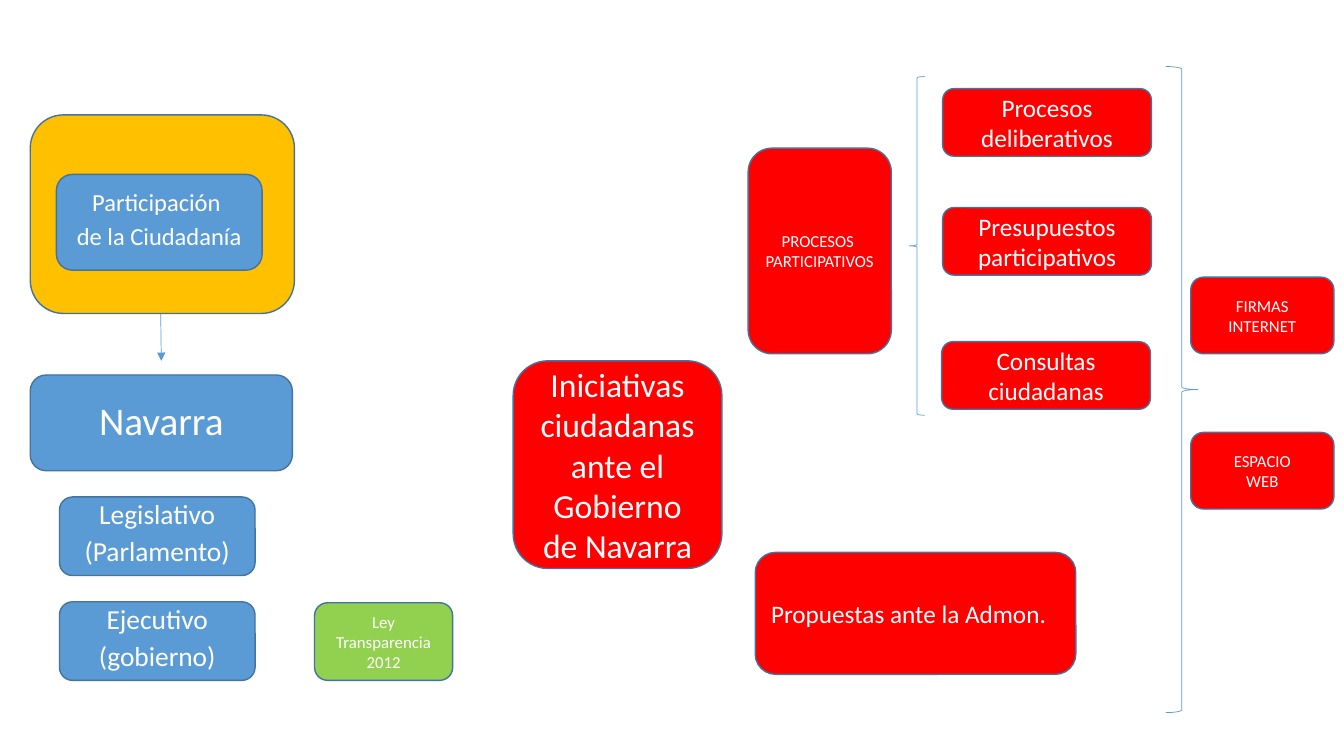
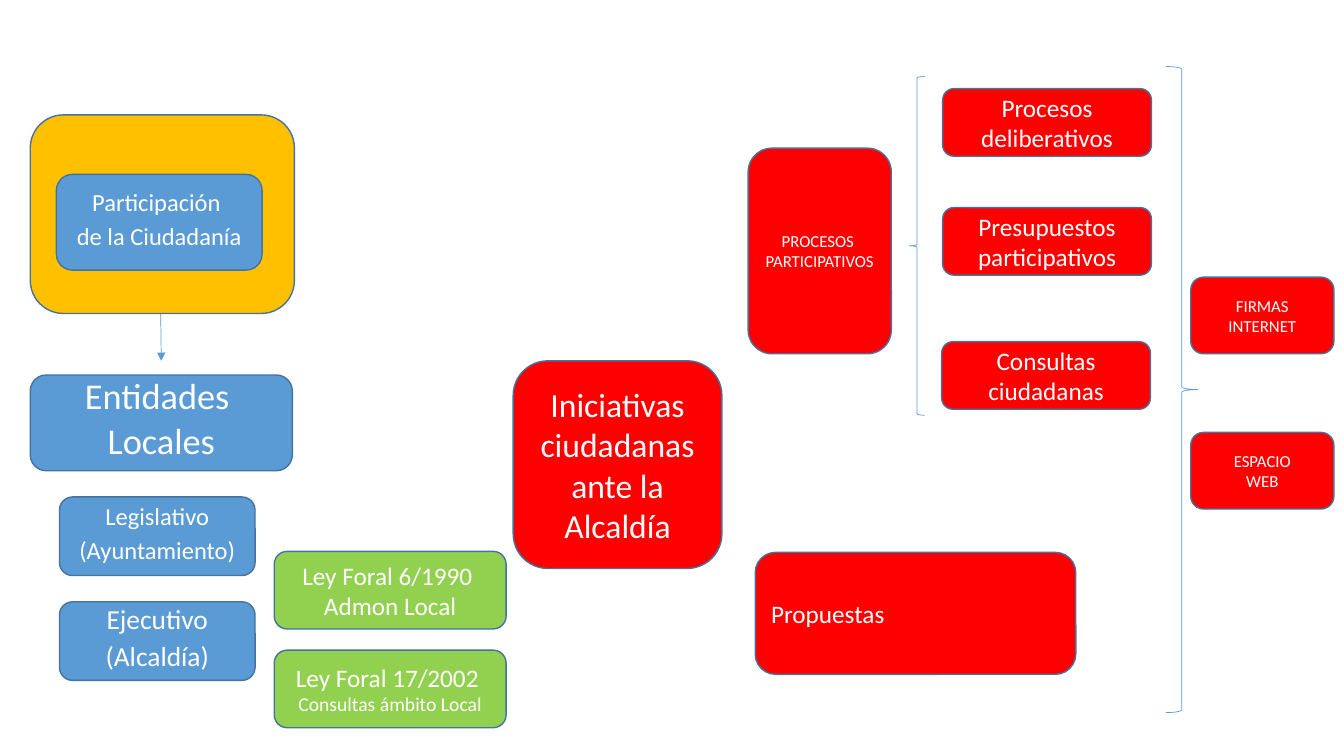
"""Build two slides on citizen participation: regional and local government."""
from pptx import Presentation, util as u
from pptx.dml.color import RGBColor
from pptx.enum import shapes, text
from pptx.oxml import parse_xml
from pptx.oxml.ns import nsdecls

HUES = {"blue": "5B9BD5", "edge": "43739E", "gold": "FFC000",
        "red": "FF0000", "green": "92D050", "white": "FFFFFF"}
KINDS = shapes.MSO_SHAPE
MID = text.PP_ALIGN.CENTER
LEFT = text.PP_ALIGN.LEFT

FRAME = {"word_wrap": True, "vertical_anchor": text.MSO_ANCHOR.MIDDLE}
PLAIN = {"alignment": MID}
START = {"alignment": LEFT}
TIGHT = {"alignment": MID, "line_spacing": 0.7, "space_before": u.Pt(10)}
LOOSE = {**TIGHT, "line_spacing": 0.9}

ARROW = (1.59, 2.8, 1.6, 3.58)
BRACES = [(KINDS.LEFT_BRACE, (9.02, 0.76, 0.15, 3.36)),
          (KINDS.RIGHT_BRACE, (11.56, 0.66, 0.32, 6.41))]

PLACES = {
    "group": (0.3, 1.14, 2.62, 1.97), "theme": (0.56, 1.73, 2.04, 0.95),
    "scope": (0.3, 3.72, 2.6, 0.95),
    "law": (0.59, 4.93, 1.94, 0.78), "rule": (0.59, 5.97, 1.94, 0.78),
    "starts": (5.09, 3.58, 2.07, 2.06), "open": (7.42, 1.47, 1.42, 2.04),
    "talks": (9.35, 0.88, 2.07, 0.67), "funds": (9.35, 2.06, 2.07, 0.67),
    "polls": (9.34, 3.39, 2.07, 0.67), "ideas": (7.49, 5.48, 3.18, 1.21),
    "signs": (11.81, 2.75, 1.42, 0.76), "web": (11.81, 4.29, 1.42, 0.76),
    "act": (3.12, 5.98, 1.37, 0.77),
    "act 1990": (2.72, 5.47, 2.3, 0.77), "act 2002": (2.72, 6.45, 2.3, 0.77),
}

SHARED = [
    ("group", "gold", 18, PLAIN, []),
    ("theme", "blue", 17.5, TIGHT, ["Participación ", "de la Ciudadanía"]),
    ("open", "red", 12, PLAIN, ["PROCESOS ", "PARTICIPATIVOS"]),
    ("talks", "red", 18, PLAIN, ["Procesos deliberativos"]),
    ("funds", "red", 18, PLAIN, ["Presupuestos participativos"]),
    ("polls", "red", 18, PLAIN, ["Consultas ciudadanas"]),
    ("signs", "red", 12, PLAIN, ["FIRMAS", "INTERNET"]),
    ("web", "red", 12, PLAIN, ["ESPACIO", "WEB"]),
]

SLIDES = [
    [("scope", "blue", 28, LOOSE, ["Navarra"]),
     ("law", "blue", 19.6, TIGHT, ["Legislativo", "(Parlamento)"]),
     ("rule", "blue", 19.6, TIGHT, ["Ejecutivo", "(gobierno)"]),
     ("act", "green", 12, PLAIN, ["Ley Transparencia 2012"]),
     ("starts", "red", 24, PLAIN,
      ["Iniciativas ciudadanas ante el Gobierno de Navarra"]),
     ("ideas", "red", 18, START, ["Propuestas ante la Admon."])],
    [("scope", "blue", 25.9, TIGHT, ["Entidades ", "Locales"]),
     ("law", "blue", 17.5, TIGHT, ["Legislativo", "(Ayuntamiento)"]),
     ("rule", "blue", 19.6, TIGHT, ["Ejecutivo", "(Alcaldía)"]),
     ("act 1990", "green", 18, PLAIN, ["Ley Foral 6/1990 ", "Admon Local"]),
     ("act 2002", "green", 18, PLAIN,
      ["Ley Foral 17/2002 ", ("Consultas ámbito Local", 14)]),
     ("starts", "red", 24, PLAIN,
      ["Iniciativas ciudadanas ante la", "Alcaldía"]),
     ("ideas", "red", 18, START, ["Propuestas"])],
]


def style(part, looks):
    for name, value in looks.items():
        setattr(part, name, value)


def hue(name):
    return RGBColor.from_string(HUES[name])


def stroke(part, name, width):
    part.line.color.rgb = hue(name)
    part.line.width = u.Pt(width)


def add_form(slide, kind, place):
    form = slide.shapes.add_shape(kind, *map(u.Inches, place))
    form.shadow.inherit = False
    return form


def add_box(slide, name, fill, size, looks, lines):
    box = add_form(slide, KINDS.FLOWCHART_ALTERNATE_PROCESS, PLACES[name])
    box.fill.solid()
    box.fill.fore_color.rgb = hue(fill)
    stroke(box, "edge", 1)
    frame = box.text_frame
    style(frame, FRAME)
    for index, line in enumerate(lines):
        words, points = line if isinstance(line, tuple) else (line, size)
        para = frame.add_paragraph() if index else frame.paragraphs[0]
        style(para, looks)
        run = para.add_run()
        run.text = words
        style(run.font, {"name": "Calibri", "size": u.Pt(points)})
        run.font.color.rgb = hue("white")


def add_arrow(slide):
    arrow = slide.shapes.add_connector(
        shapes.MSO_CONNECTOR.STRAIGHT, *map(u.Inches, ARROW))
    stroke(arrow, "blue", 0.5)
    arrow.line._get_or_add_ln().append(
        parse_xml(f'<a:tailEnd {nsdecls("a")} type="triangle"/>'))
    arrow._element.spPr.append(parse_xml(f'<a:effectLst {nsdecls("a")}/>'))


def add_brace(slide, kind, place):
    brace = add_form(slide, kind, place)
    brace.fill.background()
    stroke(brace, "blue", 0.5)


def main():
    deck = Presentation()
    style(deck, {"slide_width": u.Inches(13.33),
                 "slide_height": u.Inches(7.5)})
    blank = deck.slide_layouts[6]
    for boxes in SLIDES:
        slide = deck.slides.add_slide(blank)
        add_arrow(slide)
        for brace in BRACES:
            add_brace(slide, *brace)
        for box in SHARED + boxes:
            add_box(slide, *box)
    deck.save("out.pptx")


if __name__ == "__main__":
    main()
